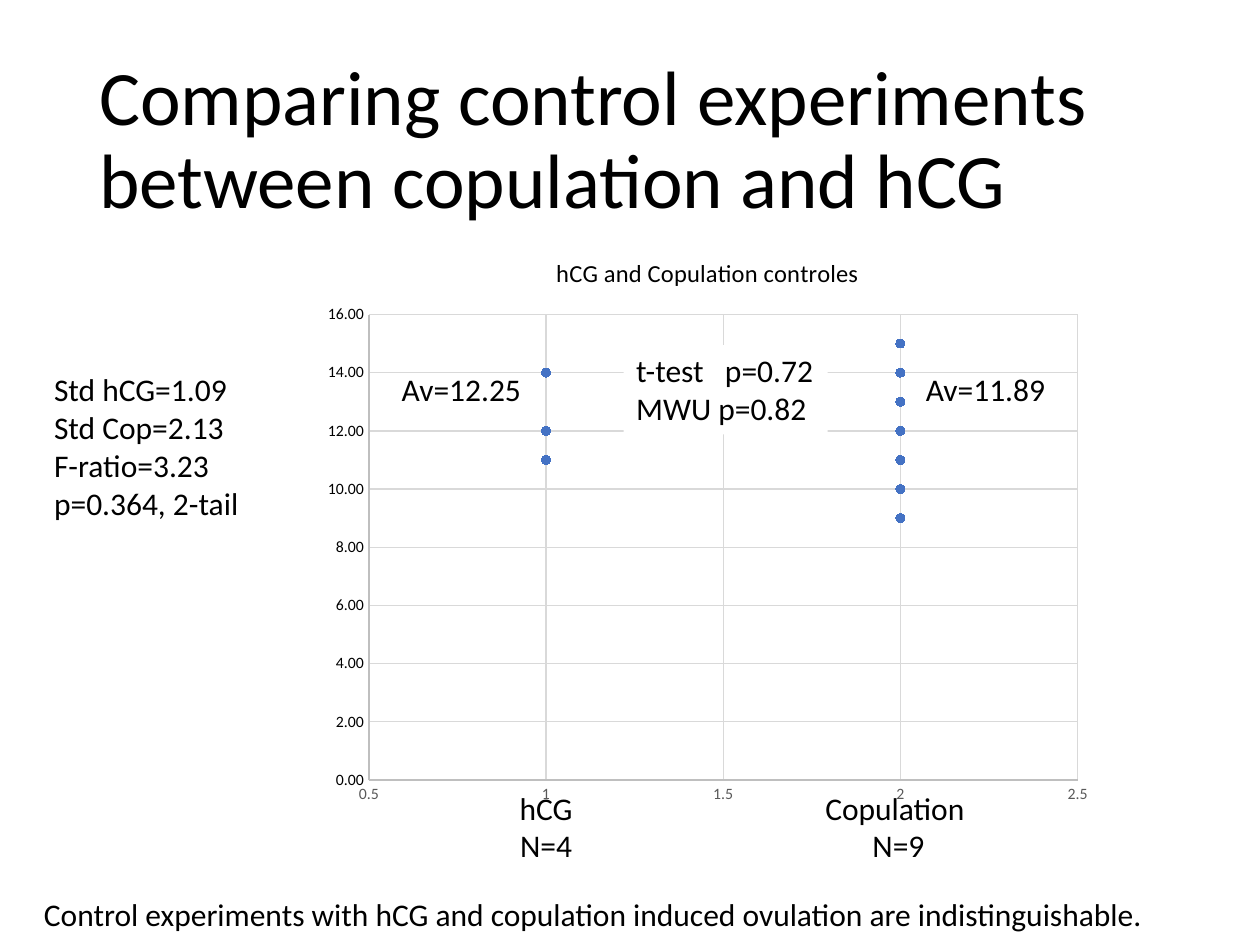
from dataclasses import dataclass
from lxml.etree import SubElement
from pptx import Presentation
from pptx.chart.data import XyChartData
from pptx.dml.color import RGBColor
from pptx.enum.chart import XL_CHART_TYPE, XL_MARKER_STYLE, XL_TICK_MARK
from pptx.enum.text import MSO_ANCHOR, MSO_AUTO_SIZE, PP_ALIGN
from pptx.oxml.ns import qn
from pptx.util import Pt


@dataclass(frozen=True)
class Theme:
    font: str = "Calibri"
    ink: str = "000000"
    muted: str = "595959"
    axis: str = "BFBFBF"
    grid: str = "D9D9D9"
    dot: str = "4472C4"
    paper: str = "FFFFFF"
    title: int = 44
    body: int = 18
    chart_title: int = 14
    chart: int = 10
    tick: int = 9


THEME = Theme()
CONTROLS = {1: [11, 12, 12, 14], 2: [12, 15, 14, 9, 11, 9, 14, 10, 13]}


def color(code):
    return RGBColor.from_string(code)


def style_font(font, size, code=THEME.ink):
    font.name = THEME.font
    font.size = Pt(size)
    font.bold = False
    font.color.rgb = color(code)


def style_line(line, code):
    line.color.rgb = color(code)
    line.width = Pt(0.75)


def place(shape, left, top, width, height):
    shape.left, shape.top = Pt(left), Pt(top)
    shape.width, shape.height = Pt(width), Pt(height)


def add_title(page, text):
    title = page.shapes.title
    place(title, 49.5, 28.75, 621, 104.4)
    frame = title.text_frame
    frame.word_wrap = True
    frame.vertical_anchor = MSO_ANCHOR.MIDDLE
    para = frame.paragraphs[0]
    para.alignment = PP_ALIGN.LEFT
    para.line_spacing = 0.9
    span = para.add_run()
    span.text = text
    style_font(span.font, THEME.title)


def add_note(page, text, left, top, width, height, align=PP_ALIGN.LEFT, fill=None):
    box = page.shapes.add_textbox(Pt(left), Pt(top), Pt(width), Pt(height))
    if fill:
        box.fill.solid()
        box.fill.fore_color.rgb = color(fill)
    frame = box.text_frame
    frame.word_wrap = False
    frame.auto_size = MSO_AUTO_SIZE.SHAPE_TO_FIT_TEXT
    frame.text = text
    for para in frame.paragraphs:
        para.alignment = align
        for span in para.runs:
            style_font(span.font, THEME.body)


def style_axis(axis, low, high, step, number_format, code):
    axis.minimum_scale, axis.maximum_scale = low, high
    axis.major_unit = step
    axis.major_tick_mark = axis.minor_tick_mark = XL_TICK_MARK.NONE
    axis.has_major_gridlines = True
    style_line(axis.major_gridlines.format.line, THEME.grid)
    style_line(axis.format.line, THEME.axis)
    axis.tick_labels.number_format = number_format
    axis.tick_labels.number_format_is_linked = False
    style_font(axis.tick_labels.font, THEME.tick, code)


def set_plot_area(chart, **fractions):
    area = chart._chartSpace.chart.plotArea
    for old in area.findall(qn("c:layout")):
        area.remove(old)
    layout = SubElement(area, qn("c:layout"))
    area.insert(0, layout)
    manual = SubElement(layout, qn("c:manualLayout"))
    settings = {"layoutTarget": "inner", "xMode": "edge", "yMode": "edge", **fractions}
    for name, value in settings.items():
        SubElement(manual, qn(f"c:{name}")).set("val", str(value))


def add_scatter(page, title, groups, left, top, width, height):
    data = XyChartData()
    points = data.add_series("Series 1")
    for group, values in groups.items():
        for value in values:
            points.add_data_point(group, value)
    chart = page.shapes.add_chart(
        XL_CHART_TYPE.XY_SCATTER, Pt(left), Pt(top), Pt(width), Pt(height), data
    ).chart
    style_font(chart.font, THEME.chart)
    chart.has_legend = False
    chart.has_title = True
    chart.chart_title.include_in_layout = False
    para = chart.chart_title.text_frame.paragraphs[0]
    span = para.add_run()
    span.text = title
    style_font(span.font, THEME.chart_title)
    chart.plots[0].vary_by_categories = False
    series = chart.plots[0].series[0]
    series.smooth = False
    series.format.line.fill.background()
    marker = series.marker
    marker.style, marker.size = XL_MARKER_STYLE.CIRCLE, 5
    marker.format.fill.solid()
    marker.format.fill.fore_color.rgb = color(THEME.dot)
    style_line(marker.format.line, THEME.dot)
    style_axis(chart.category_axis, 0.5, 2.5, 0.5, "General", THEME.muted)
    style_axis(chart.value_axis, 0, 16, 2, "0.00", THEME.ink)
    set_plot_area(chart, x=0.07, y=0.14, w=0.9, h=0.8)


def main():
    deck = Presentation()
    deck.slide_width, deck.slide_height = Pt(720), Pt(540)
    page = deck.slides.add_slide(deck.slide_layouts[5])
    add_title(page, "Comparing control experiments between copulation and hCG")
    add_scatter(page, "hCG and Copulation controles", CONTROLS, 179.3, 133.2, 450, 332.6)
    center = PP_ALIGN.CENTER
    add_note(page, "hCG\nN=4", 289.4, 447.1, 45.4, 50.9, align=center)
    add_note(page, "Copulation \nN=9", 463.7, 447.1, 99.4, 50.9, align=center)
    add_note(page, "Av=12.25", 222.5, 208.1, 83.5, 29.1)
    add_note(page, "Av=11.89", 522, 208.1, 83.5, 29.1)
    add_note(page, "t-test   p=0.72\nMWU p=0.82", 356.4, 197.3, 116.6, 50.9, fill=THEME.paper)
    add_note(page, "Std hCG=1.09\nStd Cop=2.13\nF-ratio=3.23\np=0.364, 2-tail", 23.8, 208.1, 121, 94.5)
    add_note(
        page,
        "Control experiments with hCG and copulation induced ovulation are indistinguishable.",
        18, 507.6, 654.5, 29.1,
    )
    deck.save("out.pptx")


if __name__ == "__main__":
    main()
